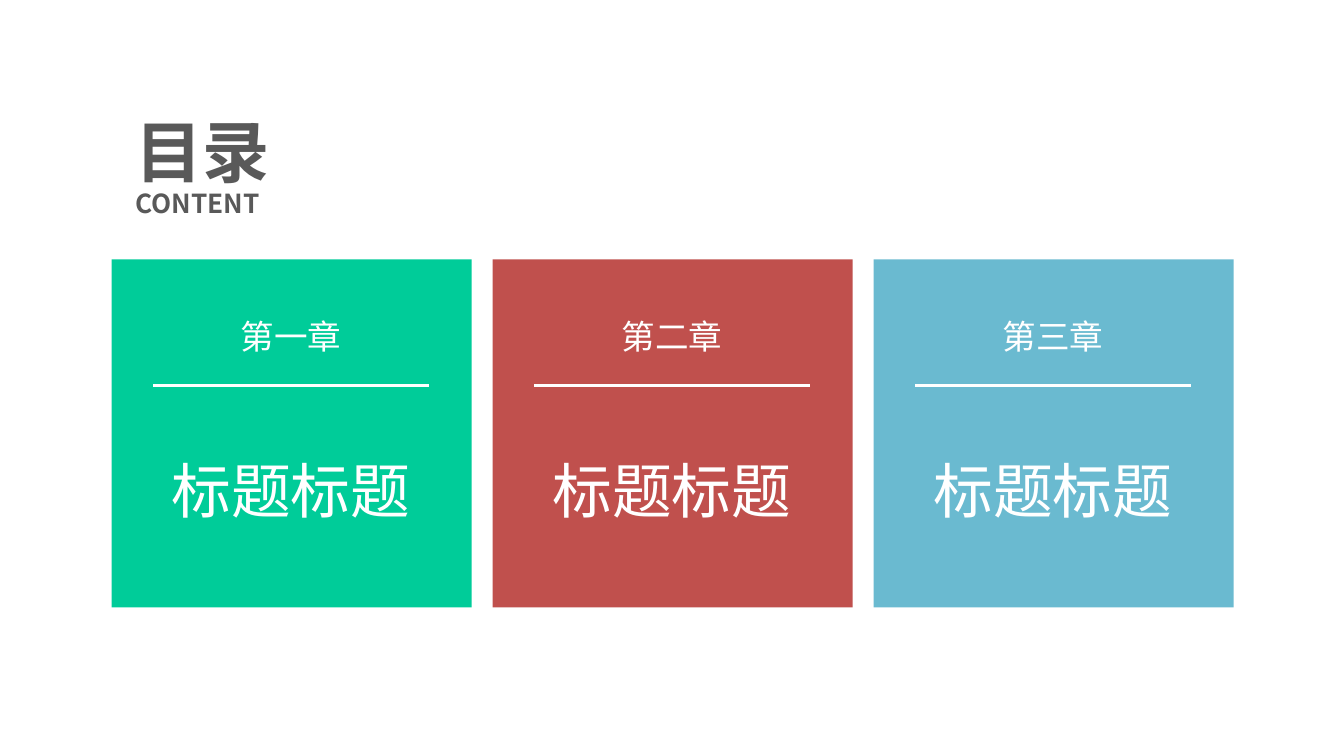
"""Build a contents slide with a heading and three chapter cards."""
import dataclasses

import lxml.etree
import pptx
import pptx.dml.color
import pptx.enum.shapes
import pptx.enum.text
import pptx.oxml.ns
import pptx.util

Inches = pptx.util.Inches
ALIGN = pptx.enum.text.PP_ALIGN


@dataclasses.dataclass(frozen=True)
class Theme:
    font: str = "Noto Sans CJK SC"
    heading_color: str = "595959"
    card_text: str = "FFFFFF"
    card_fills: tuple = ("00CC99", "C0504D", "6ABAD0")
    heading_size: int = 36
    subheading_size: int = 14
    chapter_size: int = 18
    title_size: int = 32
    rule_width: float = 1.5
    subheading_spacing: float = 0.9


def rgb(value):
    return pptx.dml.color.RGBColor.from_string(value)


def write_text(para, text, *, font, size, color, bold=False, align=ALIGN.LEFT, spacing=1.0):
    para.alignment = align
    para.line_spacing = spacing
    span = para.add_run()
    span.text = text
    span.font.name = font
    span.font.size = pptx.util.Pt(size)
    span.font.bold = bold
    span.font.color.rgb = rgb(color)
    east_asian = lxml.etree.SubElement(span.font._element, pptx.oxml.ns.qn("a:ea"))
    east_asian.set("typeface", font)


class SlideBuilder:
    def __init__(self, page, theme):
        self.page = page
        self.theme = theme

    def text_box(self, shapes, left, top, width, height):
        box = shapes.add_textbox(Inches(left), Inches(top), Inches(width), Inches(height))
        box.text_frame.word_wrap = True
        box.text_frame.auto_size = pptx.enum.text.MSO_AUTO_SIZE.SHAPE_TO_FIT_TEXT
        return box.text_frame

    def panel(self, shapes, left, top, width, height, fill):
        panel = shapes.add_shape(
            pptx.enum.shapes.MSO_SHAPE.RECTANGLE,
            Inches(left), Inches(top), Inches(width), Inches(height))
        panel.shadow.inherit = False
        panel.fill.solid()
        panel.fill.fore_color.rgb = rgb(fill)
        panel.line.fill.background()

    def rule(self, shapes, left, top, width):
        rule = shapes.add_connector(
            pptx.enum.shapes.MSO_CONNECTOR.STRAIGHT,
            Inches(left), Inches(top), Inches(left + width), Inches(top))
        rule.line.color.rgb = rgb(self.theme.card_text)
        rule.line.width = pptx.util.Pt(self.theme.rule_width)
        lxml.etree.SubElement(rule._element.spPr, pptx.oxml.ns.qn("a:effectLst"))

    def heading(self, text, subtext):
        theme = self.theme
        frame = self.text_box(self.page.shapes, 0.91, 0.77, 2.76, 0.94)
        style = dict(font=theme.font, color=theme.heading_color, bold=True)
        write_text(frame.paragraphs[0], text, size=theme.heading_size, **style)
        write_text(frame.add_paragraph(), subtext, size=theme.subheading_size,
                   spacing=theme.subheading_spacing, **style)

    def card(self, left, chapter, title, fill):
        theme = self.theme
        shapes = self.page.shapes.add_group_shape().shapes
        self.panel(shapes, left, 1.93, 2.68, 2.59, fill)
        self.rule(shapes, left + 0.31, 2.87, 2.05)
        labels = (
            (title, theme.title_size, 0.27, 3.33, 2.13, 0.64),
            (chapter, theme.chapter_size, 0.59, 2.3, 1.49, 0.4),
        )
        for text, size, inset, top, width, height in labels:
            frame = self.text_box(shapes, left + inset, top, width, height)
            write_text(frame.paragraphs[0], text, font=theme.font, size=size,
                       color=theme.card_text, align=ALIGN.CENTER)


def main():
    deck = pptx.Presentation()
    deck.slide_width, deck.slide_height = Inches(10), Inches(10 * 9 / 16)
    theme = Theme()
    builder = SlideBuilder(deck.slides.add_slide(deck.slide_layouts[6]), theme)
    builder.heading("目录", "CONTENT")
    first_left, last_left = 0.83, 6.5
    chapters = ("第一章", "第二章", "第三章")
    step = (last_left - first_left) / (len(chapters) - 1)
    for index, (chapter, fill) in enumerate(zip(chapters, theme.card_fills)):
        builder.card(first_left + index * step, chapter, "标题标题", fill)
    deck.save("out.pptx")


if __name__ == "__main__":
    main()
